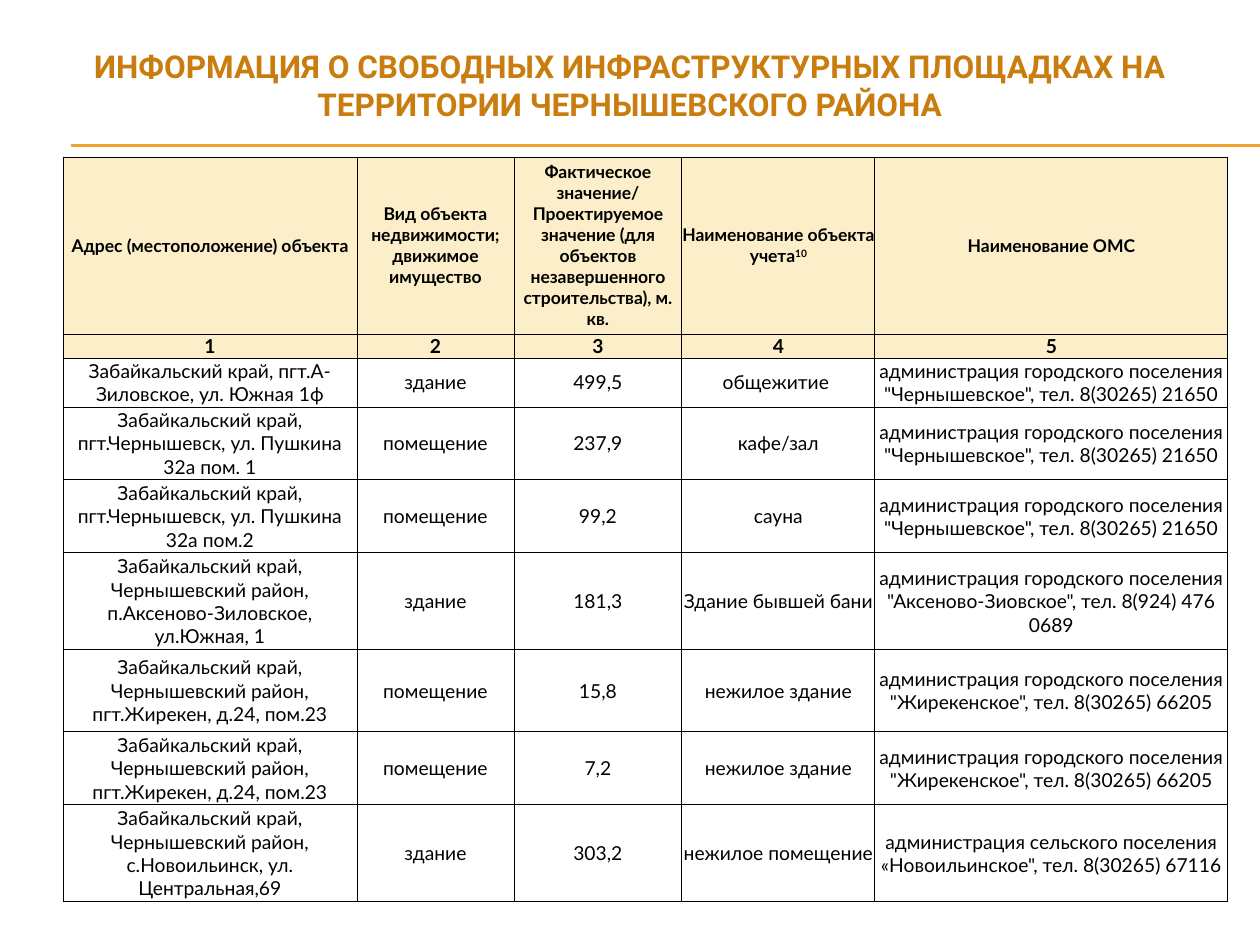
"""Build a slide listing vacant infrastructure sites of the district."""
from lxml import etree
from pptx import Presentation
from pptx.dml.color import RGBColor
from pptx.enum.shapes import MSO_CONNECTOR
from pptx.enum.text import MSO_ANCHOR, PP_ALIGN
from pptx.oxml import parse_xml
from pptx.oxml.ns import nsdecls, qn
from pptx.util import Pt

PX = 7257.14
STRAIGHT = MSO_CONNECTOR.STRAIGHT
MIDDLE = MSO_ANCHOR.MIDDLE
CENTER = PP_ALIGN.CENTER
COLORS = {
    "title": "C87D0E",
    "rule": "F0A22E",
    "header": "FBEEC9",
    "body": "FFFFFF",
    "text": "000000",
}
COLS = [294, 157, 168, 193, 353]
ROWS = [177, 24, 49, 73, 73, 97, 82, 73, 97]
HEADER_ROWS = 2
TOWN = "администрация городского поселения "
CHERNYSHEVSK = TOWN + '"Чернышевское", тел. 8(30265) 21650'
ZHIREKEN = TOWN + '"Жирекенское", тел. 8(30265) 66205'
ZHIREKEN_SITE = "Забайкальский край, Чернышевский район, пгт.Жирекен, д.24, пом.23"
DATA = [
    ["Адрес (местоположение) объекта",
     "Вид объекта недвижимости; движимое имущество",
     "Фактическое значение/ Проектируемое значение (для объектов "
     "незавершенного строительства), м. кв.",
     "Наименование объекта учета", "Наименование ОМС"],
    ["1", "2", "3", "4", "5"],
    ["Забайкальский край, пгт.А-Зиловское, ул. Южная 1ф",
     "здание", "499,5", "общежитие ", CHERNYSHEVSK],
    ["Забайкальский край, пгт.Чернышевск, ул. Пушкина 32а пом. 1",
     "помещение", "237,9", "кафе/зал", CHERNYSHEVSK],
    ["Забайкальский край, пгт.Чернышевск, ул. Пушкина 32а пом.2",
     "помещение", "99,2", "сауна", CHERNYSHEVSK],
    ["Забайкальский край, Чернышевский район, п.Аксеново-Зиловское, ул.Южная, 1",
     "здание", "181,3", "Здание бывшей бани",
     TOWN + '"Аксеново-Зиовское", тел. 8(924) 476 0689'],
    [ZHIREKEN_SITE, "помещение", "15,8", "нежилое здание", ZHIREKEN],
    [ZHIREKEN_SITE, "помещение", "7,2", "нежилое здание", ZHIREKEN],
    ["Забайкальский край, Чернышевский район, с.Новоильинск, ул. Центральная,69",
     "здание", "303,2", "нежилое помещение",
     'администрация сельского поселения «Новоильинское", тел. 8(30265) 67116'],
]


def px(n):
    return round(n * PX)


def add_text(p, text, size=11, font="Lato", color="text", bold=False, baseline=None):
    p.alignment = CENTER
    r = p.add_run()
    r.text = text
    r.font.size = Pt(size)
    r.font.name = font
    r.font.bold = bold
    r.font.color.rgb = RGBColor.from_string(COLORS[color])
    if baseline:
        r._r.get_or_add_rPr().set("baseline", str(baseline))


prs = Presentation()
prs.slide_width, prs.slide_height = px(1260), px(945)
s = prs.slides.add_slide(prs.slide_layouts[6])

for y in (145, 146):
    line = s.shapes.add_connector(STRAIGHT, px(71), px(y), px(1260), px(y))
    line.line.color.rgb = RGBColor.from_string(COLORS["rule"])
    line.line.width = Pt(0.75)
    etree.SubElement(line._element.spPr, qn("a:effectLst"))

sp = s.shapes.add_textbox(px(63), px(22), px(1134), px(126))
tf = sp.text_frame
tf.word_wrap = True
tf.vertical_anchor = MIDDLE
add_text(tf.paragraphs[0],
         "ИНФОРМАЦИЯ О СВОБОДНЫХ ИНФРАСТРУКТУРНЫХ ПЛОЩАДКАХ НА "
         "ТЕРРИТОРИИ ЧЕРНЫШЕВСКОГО РАЙОНА",
         size=18, font="Roboto", color="title", bold=True)

table = s.shapes.add_table(len(ROWS), len(COLS), px(63), px(157),
                           px(sum(COLS)), px(sum(ROWS))).table
for col, width in zip(table.columns, COLS):
    col.width = px(width)
for row, height in zip(table.rows, ROWS):
    row.height = px(height)

for i, values in enumerate(DATA):
    header = i < HEADER_ROWS
    size = 10 if i == 0 else 11
    for j, text in enumerate(values):
        cell = table.cell(i, j)
        cell.margin_left = cell.margin_right = 0
        cell.margin_top = cell.margin_bottom = 0
        cell.vertical_anchor = MIDDLE
        p = cell.text_frame.paragraphs[0]
        add_text(p, text, size=size, bold=header)
        if (i, j) == (0, 3):
            add_text(p, "10", size=size, bold=True, baseline=30000)
        tc_pr = cell._tc.get_or_add_tcPr()
        for side in ("lnL", "lnR", "lnT", "lnB"):
            tc_pr.append(parse_xml(
                f'<a:{side} {nsdecls("a")} w="{Pt(0.5)}"><a:solidFill>'
                f'<a:srgbClr val="{COLORS["text"]}"/></a:solidFill></a:{side}>'))
        cell.fill.solid()
        cell.fill.fore_color.rgb = RGBColor.from_string(
            COLORS["header" if header else "body"])

prs.save("out.pptx")
